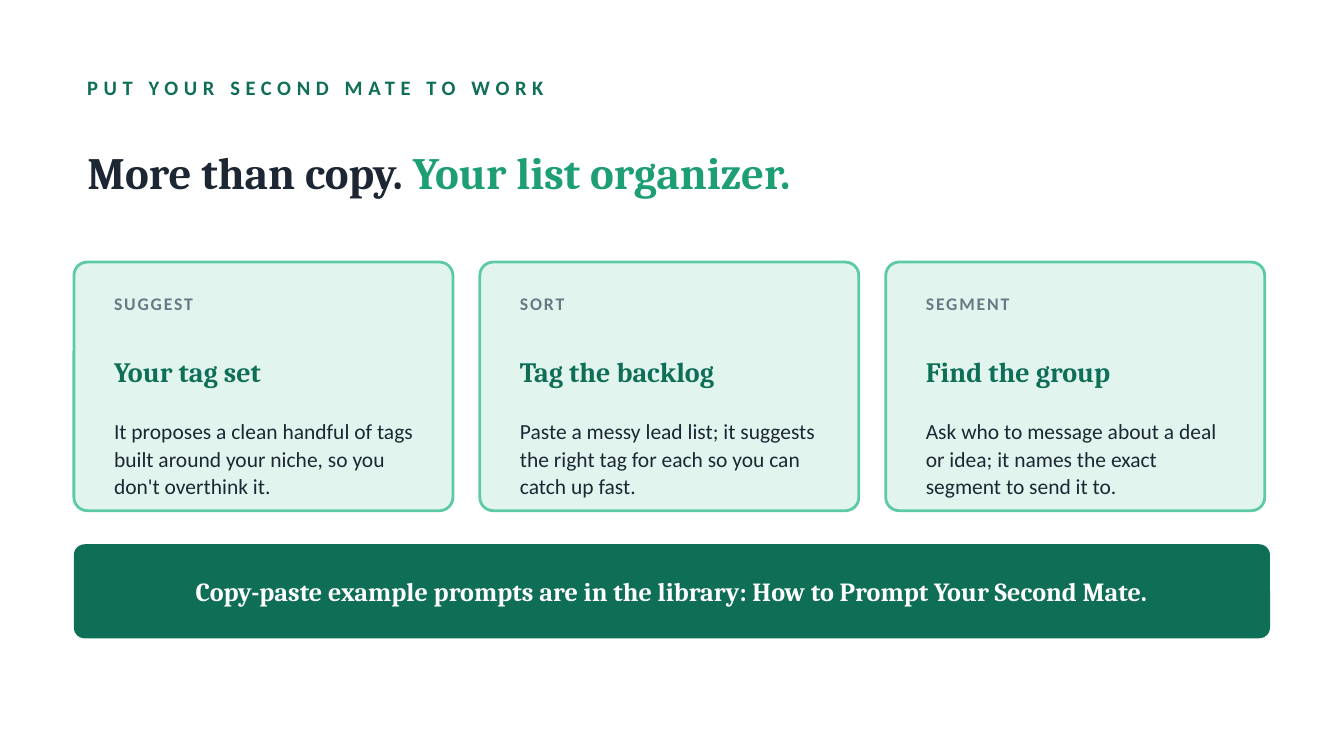
from dataclasses import dataclass

from pptx import Presentation
from pptx.dml.color import RGBColor
from pptx.enum.shapes import MSO_SHAPE
from pptx.enum.text import MSO_ANCHOR, MSO_AUTO_SIZE, PP_ALIGN
from pptx.shapes.autoshape import Shape
from pptx.slide import Slide
from pptx.util import Inches, Pt

SLIDE_W = 10
SLIDE_H = SLIDE_W * 9 / 16
MARGIN = 0.55
CONTENT_W = SLIDE_W - 2 * MARGIN
CARD_W, CARD_H, CARD_TOP = 2.82, 1.85, 1.95
COLUMN_STEP = CARD_W + 0.2
CARD_PAD, CARD_TEXT_W = 0.2, 2.45
RADIUS = 0.1
BANNER_TOP, BANNER_H, BANNER_PAD = 4.05, 0.7, 0.25

COLORS = {
    "ink": "1C2733",
    "muted": "6B7785",
    "deep": "0F6E56",
    "accent": "1D9E75",
    "edge": "5DCAA5",
    "mint": "E1F5EE",
    "white": "FFFFFF",
}

FRAME = {
    "word_wrap": True,
    "auto_size": MSO_AUTO_SIZE.NONE,
    "vertical_anchor": MSO_ANCHOR.MIDDLE,
}


@dataclass(frozen=True)
class Box:
    left: float
    top: float
    width: float
    height: float

    def emu(self) -> tuple[int, ...]:
        return tuple(Inches(v) for v in (self.left, self.top, self.width, self.height))


@dataclass(frozen=True)
class Style:
    font: str
    size: float
    color: str
    bold: bool = True
    tracking: float = 0
    line_spacing: float | None = None
    align: PP_ALIGN = PP_ALIGN.LEFT


@dataclass(frozen=True)
class Card:
    label: str
    heading: str
    body: str


KICKER = Style("Calibri", 11, "deep", tracking=3)
TITLE = Style("Cambria", 24, "ink")
TITLE_ACCENT = Style("Cambria", 24, "accent")
LABEL = Style("Calibri", 9.5, "muted", tracking=1)
HEADING = Style("Cambria", 15, "deep")
BODY = Style("Calibri", 11.5, "ink", bold=False, line_spacing=1.08)
BANNER = Style("Cambria", 14, "white", align=PP_ALIGN.CENTER)

CARDS = [
    Card("SUGGEST", "Your tag set",
         "It proposes a clean handful of tags built around your niche, so you don't overthink it."),
    Card("SORT", "Tag the backlog",
         "Paste a messy lead list; it suggests the right tag for each so you can catch up fast."),
    Card("SEGMENT", "Find the group",
         "Ask who to message about a deal or idea; it names the exact segment to send it to."),
]


def rgb(name: str) -> RGBColor:
    return RGBColor.from_string(COLORS[name])


def write(s: Shape, *runs: tuple[str, Style]) -> None:
    tf = s.text_frame
    for name, value in FRAME.items():
        setattr(tf, name, value)
    p = tf.paragraphs[0]
    first = runs[0][1]
    p.alignment, p.line_spacing = first.align, first.line_spacing
    for text, style in runs:
        r = p.add_run()
        r.text = text
        values = {"name": style.font, "size": Pt(style.size), "bold": style.bold}
        for name, value in values.items():
            setattr(r.font, name, value)
        r.font.color.rgb = rgb(style.color)
        if style.tracking:
            r._r.get_or_add_rPr().set("spc", str(int(style.tracking * 100)))


def add_text(slide: Slide, box: Box, text: str, style: Style) -> None:
    write(slide.shapes.add_textbox(*box.emu()), (text, style))


def add_panel(slide: Slide, box: Box, fill: str, radius: float, edge: str | None = None) -> None:
    s = slide.shapes.add_shape(MSO_SHAPE.ROUNDED_RECTANGLE, *box.emu())
    s.adjustments[0] = radius / box.height
    s.shadow.inherit = False
    s.fill.solid()
    s.fill.fore_color.rgb = rgb(fill)
    if edge:
        s.line.color.rgb = rgb(edge)
        s.line.width = Pt(1.5)
    else:
        s.line.fill.background()


def add_title(slide: Slide, box: Box, *runs: tuple[str, Style]) -> None:
    s = slide.shapes.title
    for name, value in zip(("left", "top", "width", "height"), box.emu()):
        setattr(s, name, value)
    write(s, *runs)


def add_card(slide: Slide, column: int, card: Card) -> None:
    left = MARGIN + column * COLUMN_STEP
    add_panel(slide, Box(left, CARD_TOP, CARD_W, CARD_H), "mint", RADIUS, "edge")
    rows = [
        (0.16, 0.3, card.label, LABEL),
        (0.46, 0.7, card.heading, HEADING),
        (1.18, 0.55, card.body, BODY),
    ]
    for offset, height, text, style in rows:
        add_text(slide, Box(left + CARD_PAD, CARD_TOP + offset, CARD_TEXT_W, height), text, style)


def main() -> None:
    prs = Presentation()
    prs.slide_width, prs.slide_height = Inches(SLIDE_W), Inches(SLIDE_H)
    slide = prs.slides.add_slide(prs.slide_layouts[5])

    add_text(slide, Box(MARGIN, 0.5, CONTENT_W, 0.3), "PUT YOUR SECOND MATE TO WORK", KICKER)
    add_title(slide, Box(MARGIN, 0.85, CONTENT_W, 0.85),
              ("More than copy. ", TITLE), ("Your list organizer.", TITLE_ACCENT))
    for column, card in enumerate(CARDS):
        add_card(slide, column, card)

    add_panel(slide, Box(MARGIN, BANNER_TOP, CONTENT_W, BANNER_H), "deep", 0.08)
    add_text(slide, Box(MARGIN + BANNER_PAD, BANNER_TOP, CONTENT_W - 2 * BANNER_PAD, BANNER_H),
             "Copy-paste example prompts are in the library: How to Prompt Your Second Mate.", BANNER)
    prs.save("out.pptx")


if __name__ == "__main__":
    main()
